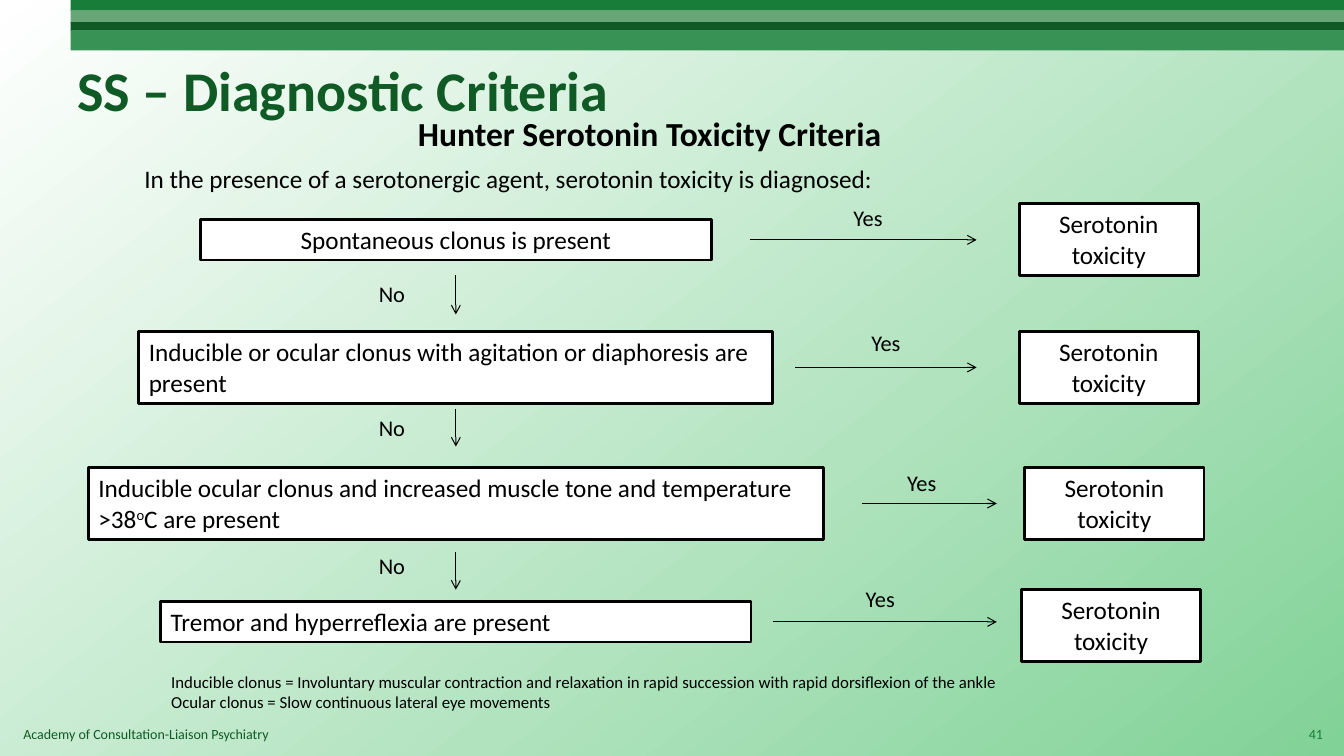
from typing import NamedTuple

import pptx
import pptx.dml.color
import pptx.enum.shapes
import pptx.enum.text
import pptx.oxml
import pptx.oxml.ns
import pptx.util

ALIGN = pptx.enum.text.PP_ALIGN
ANCHOR = pptx.enum.text.MSO_ANCHOR
RECT = pptx.enum.shapes.MSO_SHAPE.RECTANGLE
STRAIGHT = pptx.enum.shapes.MSO_CONNECTOR.STRAIGHT

WIDE, HIGH = pptx.util.Inches(13.333), pptx.util.Inches(7.5)
COLS, ROWS = 120, 75
FONT = "Calibri"
BLACK, WHITE, DARK, GREEN = "000000", "FFFFFF", "105A25", "177D38"
AXIS = 40.7  # column on which the questions and the "No" arrows are centred
ONE_LINE, TWO_LINES = 4, 7.1


class Area(NamedTuple):
    col: float
    row: float
    cols: float
    rows: float


class Style(NamedTuple):
    size: int
    color: str = BLACK
    bold: bool = False
    align: ALIGN = ALIGN.LEFT
    anchor: ANCHOR = ANCHOR.TOP


class Band(NamedTuple):
    row: float
    rows: float
    color: str


class Label(NamedTuple):
    text: str
    area: Area
    style: Style


class Step(NamedTuple):
    text: str
    mid: float
    cols: float
    rows: float
    align: ALIGN
    start: float
    end: float
    yes_col: float
    yes_row: float
    result_col: float
    result_mid: float


class Down(NamedTuple):
    label: float
    start: float
    end: float


BANDS = [
    Band(0, 1.1, GREEN),
    Band(1, 1.3, "66A677"),
    Band(2.2, 0.9, DARK),
    Band(3, 2, "389155"),
]

LABELS = [
    Label("Academy of Consultation-Liaison Psychiatry",
          Area(1.2, 71.5, 83.3, 2.7), Style(10, DARK)),
    Label("41", Area(114.2, 70.8, 4.8, 4),
          Style(10, GREEN, align=ALIGN.RIGHT, anchor=ANCHOR.MIDDLE)),
    Label("Hunter Serotonin Toxicity Criteria", Area(22, 10.7, 72, 5),
          Style(24, bold=True, align=ALIGN.CENTER)),
    Label("In the presence of a serotonergic agent, serotonin toxicity is diagnosed:",
          Area(12, 15.7, 98, 4), Style(18)),
    Label("Inducible clonus = Involuntary muscular contraction and relaxation in "
          "rapid succession with rapid dorsiflexion of the ankle\n"
          "Ocular clonus = Slow continuous lateral eye movements",
          Area(14.4, 66.1, 81.9, 8.1), Style(12)),
]

STEPS = [
    Step("Spontaneous clonus is present", 23.8, 45.6, ONE_LINE, ALIGN.CENTER,
         67, 87.2, 73, 19.8, 91, 23.75),
    Step("Inducible or ocular clonus with agitation or diaphoresis are present",
         36.45, 56.6, TWO_LINES, ALIGN.LEFT, 71, 87.2, 74.6, 32.2, 91, 36.45),
    Step("Inducible ocular clonus and increased muscle tone and temperature "
         ">38^o^C are present",
         49.95, 65.6, TWO_LINES, ALIGN.LEFT, 77, 89, 77.8, 46.1, 91.5, 49.95),
    Step("Tremor and hyperreflexia are present", 61.7, 52.7, ONE_LINE, ALIGN.LEFT,
         69, 89, 74.1, 57.6, 91.2, 62.05),
]

DOWNS = [Down(27.3, 27.3, 31.2), Down(40.6, 40.6, 44.3), Down(54.3, 54.8, 58.5)]


def across(cols: float) -> int:
    return round(WIDE * cols / COLS)


def down(rows: float) -> int:
    return round(HIGH * rows / ROWS)


def place(area: Area) -> tuple:
    return across(area.col), down(area.row), across(area.cols), down(area.rows)


def paint(target, color: str) -> None:
    """Give a fill or a line's fill one solid colour."""
    target.solid()
    target.fore_color.rgb = pptx.dml.color.RGBColor.from_string(color)


def write(shape, text: str, style: Style) -> None:
    """Fill a shape with text; parts between ^ marks are superscript."""
    frame = shape.text_frame
    frame.word_wrap = True
    frame.vertical_anchor = style.anchor
    for spot, line in enumerate(text.split("\n")):
        para = frame.add_paragraph() if spot else frame.paragraphs[0]
        para.alignment = style.align
        for part, words in enumerate(line.split("^")):
            run = para.add_run()
            run.text = words
            if part % 2:
                run._r.get_or_add_rPr().set("baseline", "30000")
        para.font.name = FONT
        para.font.size = pptx.util.Pt(style.size)
        para.font.bold = style.bold
        paint(para.font.fill, style.color)


def add_label(slide, label: Label) -> None:
    write(slide.shapes.add_textbox(*place(label.area)), label.text, label.style)


def add_block(slide, area: Area, color: str):
    block = slide.shapes.add_shape(RECT, *place(area))
    block.shadow.inherit = False
    paint(block.fill, color)
    block.line.fill.background()
    return block


def add_box(slide, text: str, area: Area, align: ALIGN) -> None:
    box = add_block(slide, area, WHITE)
    paint(box.line.fill, BLACK)
    box.line.width = pptx.util.Pt(2)
    write(box, text, Style(18, align=align))


def add_arrow(slide, col: float, row: float, to_col: float, to_row: float) -> None:
    arrow = slide.shapes.add_connector(
        STRAIGHT, across(col), down(row), across(to_col), down(to_row))
    paint(arrow.line.fill, BLACK)
    arrow.line.width = pptx.util.Pt(0.75)
    tail = pptx.oxml.parse_xml(
        f'<a:tailEnd {pptx.oxml.ns.nsdecls("a")} type="arrow"/>')
    arrow.line._get_or_add_ln().append(tail)
    props = arrow._element.spPr
    props.append(pptx.oxml.parse_xml(f'<a:effectLst {pptx.oxml.ns.nsdecls("a")}/>'))


def add_step(slide, step: Step) -> None:
    """Draw a question, its "Yes" arrow and the result it leads to."""
    add_box(slide, step.text,
            Area(AXIS - step.cols / 2, step.mid - step.rows / 2, step.cols, step.rows),
            step.align)
    add_arrow(slide, step.start, step.mid, step.end, step.mid)
    add_label(slide, Label("Yes", Area(step.yes_col, step.yes_row, 9, 3.7),
                           Style(16, align=ALIGN.CENTER)))
    add_box(slide, "Serotonin toxicity",
            Area(step.result_col, step.result_mid - TWO_LINES / 2, 16, TWO_LINES),
            ALIGN.CENTER)


def main() -> None:
    deck = pptx.Presentation()
    deck.slide_width, deck.slide_height = WIDE, HIGH
    slide = deck.slides.add_slide(deck.slide_layouts[5])

    back = slide.background.fill
    back.gradient()
    back.gradient_angle = 308
    for stop, color in zip(back.gradient_stops, (WHITE, "81D297")):
        stop.color.rgb = pptx.dml.color.RGBColor.from_string(color)

    for band in BANDS:
        add_block(slide, Area(6.3, band.row, COLS - 6.3, band.rows), band.color)

    title = slide.shapes.title
    title.left, title.top, title.width, title.height = place(Area(6, 4.2, 108, 9.2))
    write(title, "SS – Diagnostic Criteria",
          Style(40, DARK, bold=True, anchor=ANCHOR.MIDDLE))

    for label in LABELS:
        add_label(slide, label)
    for step in STEPS:
        add_step(slide, step)
    for link in DOWNS:
        add_label(slide, Label("No", Area(30, link.label, 10, 3.7),
                               Style(16, align=ALIGN.CENTER)))
        add_arrow(slide, AXIS, link.start, AXIS, link.end)

    deck.save("out.pptx")


if __name__ == "__main__":
    main()
